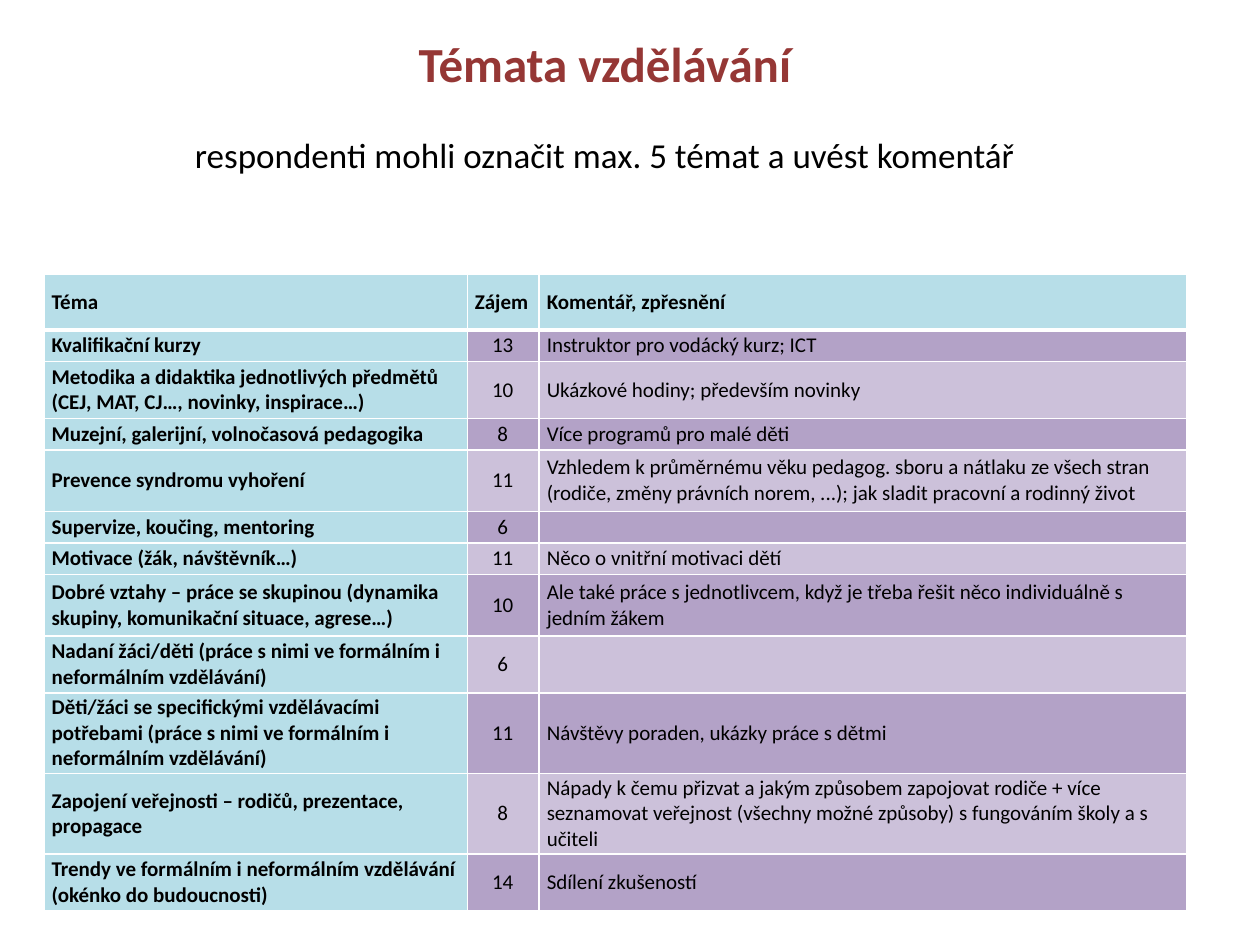
"""Build the slide on education topics with its table of interest and comments."""
from lxml import etree
from pptx import Presentation
from pptx.dml.color import RGBColor
from pptx.enum import text as t
from pptx.oxml import ns
from pptx.util import Inches, Pt

RED = RGBColor(0x95, 0x37, 0x35)
BLACK = RGBColor(0, 0, 0)
BLUE = RGBColor(0xB7, 0xDE, 0xE8)
DARK = RGBColor(0xB3, 0xA2, 0xC7)
LIGHT = RGBColor(0xCC, 0xC1, 0xDA)
WHITE = "FFFFFF"
FONT = "Calibri"

HEADS = [
    ("Témata vzdělávání", 28, RED, True),
    ("respondenti mohli označit max. 5 témat a uvést komentář", 20, BLACK, False),
]
COLS = [3.36, 0.57, 5.14]
ROWS = [
    (0.44, "Téma", "Zájem", "Komentář, zpřesnění"),
    (0.25, "Kvalifikační kurzy", "13", "Instruktor pro vodácký kurz; ICT"),
    (0.45, "Metodika a didaktika jednotlivých předmětů (CEJ, MAT, CJ…, novinky, inspirace…)",
     "10", "Ukázkové hodiny; především novinky"),
    (0.25, "Muzejní, galerijní, volnočasová pedagogika", "8", "Více programů pro malé děti"),
    (0.49, "Prevence syndromu vyhoření", "11",
     "Vzhledem k průměrnému věku pedagog. sboru a nátlaku ze všech stran "
     "(rodiče, změny právních norem, ...); jak sladit pracovní a rodinný život"),
    (0.25, "Supervize, koučing, mentoring", "6", ""),
    (0.25, "Motivace (žák, návštěvník…)", "11", "Něco o vnitřní motivaci dětí"),
    (0.49, "Dobré vztahy – práce se skupinou (dynamika skupiny, komunikační situace, agrese…)",
     "10", "Ale také práce s jednotlivcem, když je třeba řešit něco individuálně s jedním žákem"),
    (0.45, "Nadaní žáci/děti (práce s nimi ve formálním i neformálním vzdělávání)", "6", ""),
    (0.64, "Děti/žáci se specifickými vzdělávacími potřebami "
     "(práce s nimi ve formálním i neformálním vzdělávání)",
     "11", "Návštěvy poraden, ukázky práce s dětmi"),
    (0.64, "Zapojení veřejnosti – rodičů, prezentace, propagace", "8",
     "Nápady k čemu přizvat a jakým způsobem zapojovat rodiče + více seznamovat "
     "veřejnost (všechny možné způsoby) s fungováním školy a s učiteli"),
    (0.45, "Trendy ve formálním i neformálním vzdělávání (okénko do budoucnosti)",
     "14", "Sdílení zkušeností"),
]


def style(para, size, color, bold):
    for run in para.runs:
        font = run.font
        font.name, font.size, font.bold = FONT, Pt(size), bold
        font.color.rgb = color


def border(cell, side, width):
    props = cell._tc.get_or_add_tcPr()
    line = etree.SubElement(props, ns.qn(f"a:ln{side}"), w=str(Pt(width)))
    fill = etree.SubElement(line, ns.qn("a:solidFill"))
    etree.SubElement(fill, ns.qn("a:srgbClr"), val=WHITE)


def add_heads(slide):
    box = slide.shapes.add_textbox(Inches(0.35), 0, Inches(8.9), Inches(2.1))
    frame = box.text_frame
    frame.word_wrap = True
    frame.margin_top = Inches(0.27)
    frame.text = "\n".join(head[0] for head in HEADS)
    for para, (_, size, color, bold) in zip(frame.paragraphs, HEADS):
        para.alignment = t.PP_ALIGN.CENTER
        style(para, size, color, bold)
    frame.paragraphs[0].space_after = Pt(23)


def fill_cell(cell, words, row, col):
    cell.margin_left, cell.margin_right = Inches(0.06), Inches(0.07)
    cell.margin_top = cell.margin_bottom = 0
    cell.vertical_anchor = t.MSO_ANCHOR.MIDDLE
    for side in "LRTB":
        thick = (row, side) in ((0, "B"), (1, "T"))
        border(cell, side, 3 if thick else 1)
    label = row == 0 or col == 0
    cell.fill.solid()
    cell.fill.fore_color.rgb = BLUE if label else DARK if row % 2 else LIGHT
    cell.text_frame.text = words
    para = cell.text_frame.paragraphs[0]
    if label:
        para.space_after = Pt(10)
    elif col == 1:
        para.alignment = t.PP_ALIGN.CENTER
    style(para, 12, BLACK, label)
    if not words:
        etree.SubElement(para._p, ns.qn("a:endParaRPr"), sz="1200")


def add_topics(slide):
    high = sum(row[0] for row in ROWS)
    table = slide.shapes.add_table(
        len(ROWS), len(COLS), Inches(0.35), Inches(2.18), Inches(sum(COLS)), Inches(high)
    ).table
    for col, width in enumerate(COLS):
        table.columns[col].width = Inches(width)
    for row, (height, *cells) in enumerate(ROWS):
        table.rows[row].height = Inches(height)
        for col, words in enumerate(cells):
            fill_cell(table.cell(row, col), words, row, col)


def main():
    deck = Presentation()
    deck.slide_width, deck.slide_height = Inches(10), Inches(7.5)
    slide = deck.slides.add_slide(deck.slide_layouts[6])
    add_heads(slide)
    add_topics(slide)
    deck.save("out.pptx")


if __name__ == "__main__":
    main()
